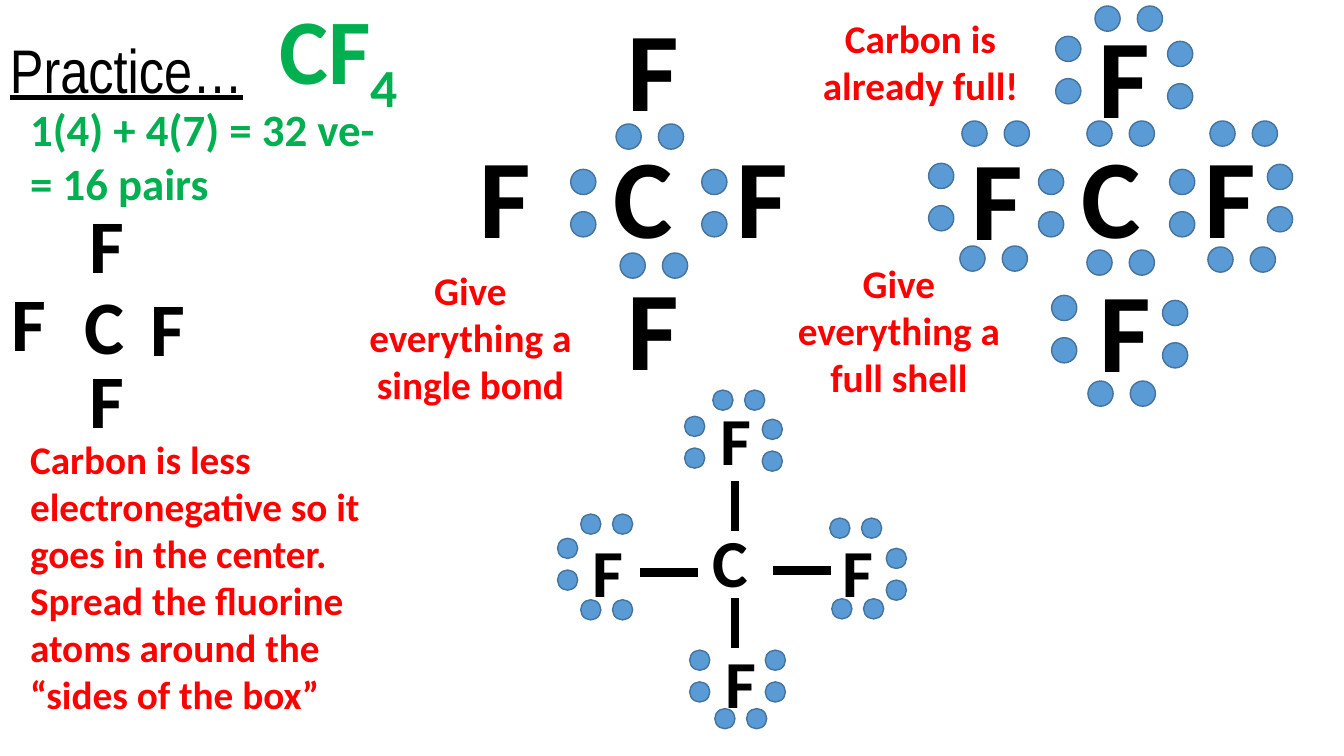
import pptx
import pptx.dml.color
import pptx.enum.shapes
import pptx.enum.text
import pptx.oxml
import pptx.oxml.ns
import pptx.util

BLACK = pptx.dml.color.RGBColor(0x00, 0x00, 0x00)
GREEN = pptx.dml.color.RGBColor(0x00, 0xB0, 0x50)
RED = pptx.dml.color.RGBColor(0xFF, 0x00, 0x00)
DOT_FILL = pptx.dml.color.RGBColor(0x5B, 0x9B, 0xD5)
DOT_LINE = pptx.dml.color.RGBColor(0x43, 0x73, 0x9E)

LEFT = pptx.enum.text.PP_ALIGN.LEFT
CENTER = pptx.enum.text.PP_ALIGN.CENTER
COLUMNS, ROWS = 133.3, 75

ATOMS = {
    54: [("F", 0.2, 26.9), ("F", 7.9, 19.1), ("C", 7.4, 27.2),
         ("F", 7.9, 34.5), ("F", 13.9, 27.4)],
    80: [("F", 46.6, 12.1), ("F", 61.3, -0.5), ("C", 59.9, 12.1),
         ("F", 61.3, 25.2), ("F", 72.1, 12.1),
         ("F", 95.4, 12.3), ("F", 108, 0.2), ("C", 106.3, 12.1),
         ("F", 108.1, 25.4), ("F", 118.5, 12.1)],
    48: [("F", 57.8, 52.1), ("F", 70.5, 39), ("C", 69.7, 51.1),
         ("F", 71, 63.1), ("F", 82.6, 52.1)],
}
SIDE_BY_SIDE = {
    2.5: [(61.1, 12.3), (61.5, 25.1), (107.8, 12), (107.8, 24.8),
          (119.8, 24.5), (120, 12), (108.6, 0.6), (95.2, 24.4),
          (95.4, 12), (107.9, 37.8)],
    2: [(70.7, 38.7), (82.5, 59.4), (57.6, 59.5), (57.6, 51),
        (82.3, 51.4), (70.9, 70.3)],
}
STACKED = {
    2.5: [(56.6, 16.8), (69.6, 16.8), (103, 16.8), (116, 16.8),
          (125.7, 16.3), (115.8, 4.1), (104.7, 3.6), (92.1, 16.2),
          (115.3, 29.8), (104.3, 29.3)],
    2: [(87.9, 54.4), (75.6, 41.6), (67.9, 41.3), (55.3, 53.4),
        (75.9, 64.5), (68.4, 64.5)],
}
PAIR_STEP = {2.5: 4.2, 2: 3.15}
BONDS = [(63.5, 56.8, 69.2, 56.8), (76.7, 56.6, 82.4, 56.6),
         (72.9, 47.7, 72.9, 52.7), (72.9, 59.3, 72.9, 64.3)]
NOTES = [
    ("Carbon is less electronegative so it goes in the center. Spread the "
     "fluorine atoms around the “sides of the box”", 2, 42.7, 40.8, 29.3, LEFT),
    ("Give everything a single bond", 35.2, 25.9, 22.9, 15.1, CENTER),
    ("Give everything a full shell", 75.7, 25.2, 26.9, 15.1, CENTER),
    ("Carbon is already full!", 79.7, 0.9, 23.2, 10.4, CENTER),
]


class Board:
    font_name = "Calibri"

    def __init__(self, deck):
        self.slide = deck.slides.add_slide(deck.slide_layouts[6])
        self.column = deck.slide_width / COLUMNS
        self.row = deck.slide_height / ROWS

    def place(self, column, row):
        return round(column * self.column), round(row * self.row)

    def box(self, column, row, columns, rows, align=LEFT):
        box = self.slide.shapes.add_textbox(
            *self.place(column, row), *self.place(columns, rows))
        box.text_frame.word_wrap = True
        box.text_frame.auto_size = pptx.enum.text.MSO_AUTO_SIZE.SHAPE_TO_FIT_TEXT
        para = box.text_frame.paragraphs[0]
        para.alignment = align
        return box, para

    def span(self, para, text, size, color, bold=True):
        span = para.add_run()
        span.text = text
        span.font.name = self.font_name
        span.font.size = pptx.util.Pt(size)
        span.font.bold = bold
        span.font.color.rgb = color
        return span

    def title(self, text):
        box, para = self.box(0, 0, 124.2, 14.5)
        box.text_frame.auto_size = pptx.enum.text.MSO_AUTO_SIZE.NONE
        box.text_frame.vertical_anchor = pptx.enum.text.MSO_ANCHOR.MIDDLE
        para.line_spacing = 0.9
        span = self.span(para, text, 44, BLACK, bold=False)
        span.font.name = "Arial Narrow"
        span.font.underline = True

    def formula(self, symbols, count):
        box, para = self.box(26.7, -1.3, 34.9, 12.1)
        self.span(para, symbols, 66, GREEN)
        subscript = self.span(para, count, 66, GREEN)
        subscript.font._element.set("baseline", "-25000")

    def electron_count(self, total, pairs):
        box, para = self.box(2, 9.6, 61.2, 11.8)
        self.span(para, total, 32, GREEN)
        para.add_line_break()
        self.span(para, pairs, 32, GREEN)

    def note(self, text, column, row, columns, rows, align):
        box, para = self.box(column, row, columns, rows, align)
        self.span(para, text, 28, RED)

    def atom(self, symbol, column, row, size):
        box, para = self.box(column, row, 13.3, size * 0.17 + 0.9)
        self.span(para, symbol, size, BLACK)

    def dot(self, column, row, size):
        dot = self.slide.shapes.add_shape(
            pptx.enum.shapes.MSO_SHAPE.OVAL,
            *self.place(column, row), *self.place(size, size))
        dot.shadow.inherit = False
        dot.fill.solid()
        dot.fill.fore_color.rgb = DOT_FILL
        dot.line.color.rgb = DOT_LINE
        dot.line.width = pptx.util.Pt(1)

    def pairs(self, places, size, across, down):
        for column, row in places:
            self.dot(column, row, size)
            self.dot(column + across, row + down, size)

    def bond(self, column, row, end_column, end_row):
        bond = self.slide.shapes.add_connector(
            pptx.enum.shapes.MSO_CONNECTOR.STRAIGHT,
            *self.place(column, row), *self.place(end_column, end_row))
        bond.line.color.rgb = BLACK
        bond.line.width = pptx.util.Pt(6)
        bond._element.spPr.append(pptx.oxml.parse_xml(
            "<a:effectLst %s/>" % pptx.oxml.ns.nsdecls("a")))


def main():
    deck = pptx.Presentation()
    deck.slide_width = pptx.util.Inches(13.33)
    deck.slide_height = pptx.util.Inches(7.5)
    board = Board(deck)
    board.title("Practice…")
    board.formula("CF", "4")
    board.electron_count("1(4) + 4(7) = 32 ve-", "= 16 pairs")
    for note in NOTES:
        board.note(*note)
    for size, atoms in ATOMS.items():
        for atom in atoms:
            board.atom(*atom, size)
    for bond in BONDS:
        board.bond(*bond)
    for size, step in PAIR_STEP.items():
        board.pairs(SIDE_BY_SIDE[size], size, step, 0)
        board.pairs(STACKED[size], size, 0, step)
    deck.save("out.pptx")


if __name__ == "__main__":
    main()
